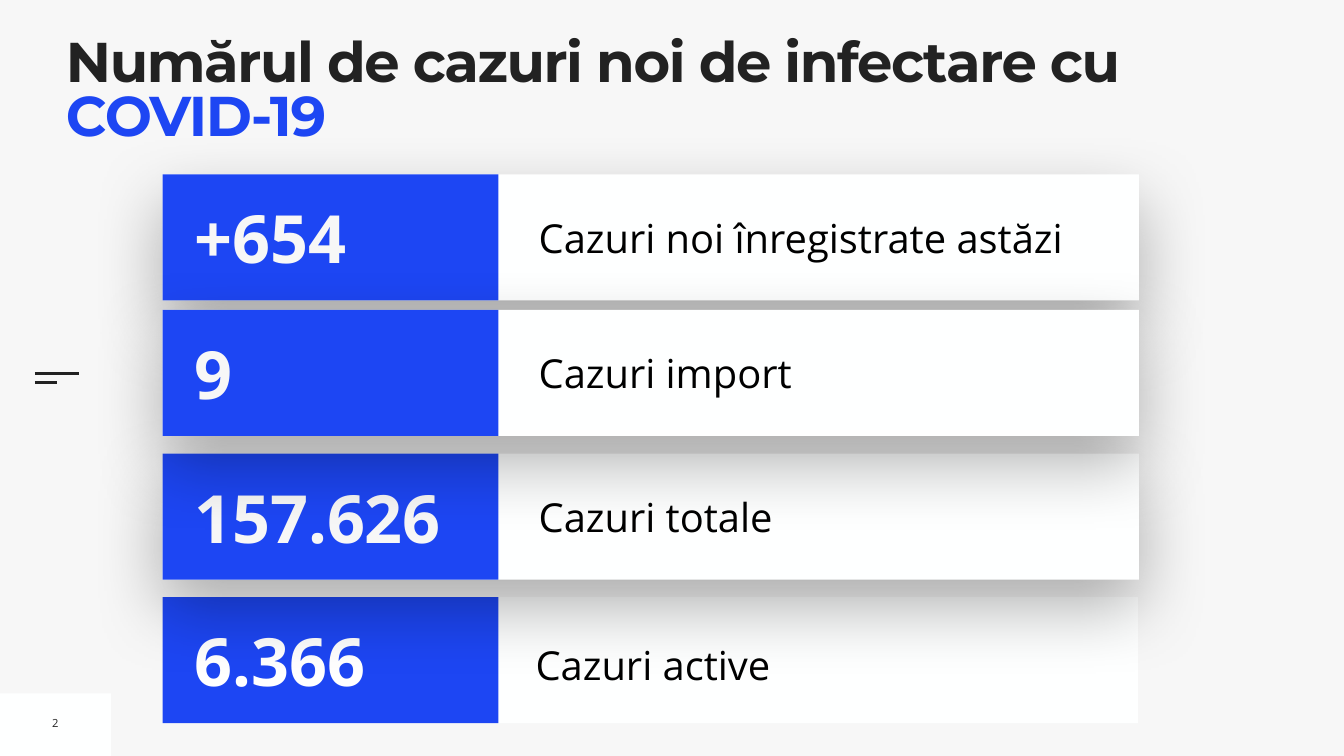
"""Build a slide of daily COVID-19 case counts as four labelled cards."""
from dataclasses import dataclass

from lxml import etree
from pptx import Presentation
from pptx.dml.color import RGBColor as RGB
from pptx.enum import shapes, text
from pptx.oxml.ns import qn
from pptx.util import Inches, Pt


@dataclass(frozen=True)
class Theme:
    back: RGB = RGB.from_string("F7F7F7")
    card: RGB = RGB.from_string("FEFFFF")
    white: RGB = RGB.from_string("FFFFFF")
    blue: RGB = RGB.from_string("1D46F3")
    dark: RGB = RGB.from_string("222222")
    black: RGB = RGB.from_string("000000")
    head: str = "Montserrat"
    body: str = "Open Sans"
    title: int = 80
    count: int = 95
    label: int = 57
    page: int = 16


theme = Theme()
deck = Presentation()
deck.slide_width, deck.slide_height = Inches(26.67), Inches(15)
slide = deck.slides.add_slide(deck.slide_layouts[6])
slide.background.fill.solid()
slide.background.fill.fore_color.rgb = theme.back


def add_box(left, top, width, height, color):
    box = slide.shapes.add_shape(
        shapes.MSO_SHAPE.RECTANGLE, *map(Inches, (left, top, width, height)))
    box.shadow.inherit = False
    box.fill.solid()
    box.fill.fore_color.rgb = color
    box.line.fill.background()
    return box


def add_text(left, top, width, height, words, size, color, bold=False,
             face=theme.body, inset=0.1, anchor=text.MSO_ANCHOR.MIDDLE):
    frame = slide.shapes.add_textbox(
        *map(Inches, (left, top, width, height))).text_frame
    frame.word_wrap = True
    frame.vertical_anchor = anchor
    frame.margin_left = frame.margin_right = Inches(inset)
    frame.margin_top = frame.margin_bottom = Inches(inset)
    para = frame.paragraphs[0]
    para.add_run().text = words
    para.font.name, para.font.size, para.font.bold = face, Pt(size), bold
    para.font.color.rgb = color
    return para


add_box(0, 13.76, 2.2, 1.24, theme.card)
for top, right in ((7.41, 1.57), (7.59, 1.13)):
    dash = slide.shapes.add_connector(
        shapes.MSO_CONNECTOR.STRAIGHT, Inches(0.69), Inches(top), Inches(right), Inches(top))
    dash.line.color.rgb = theme.dark
    dash.line.width = Pt(3)
    etree.SubElement(dash._element.spPr, qn("a:effectLst"))

page = add_text(0.8, 14.09, 0.6, 0.51, "2", theme.page, theme.dark)
page.alignment = text.PP_ALIGN.CENTER

title = add_text(1.31, 0.78, 23.94, 1.58, "Numărul de cazuri noi de infectare cu ",
                 theme.title, theme.dark, True, theme.head, 0, text.MSO_ANCHOR.TOP)
title.line_spacing = 0.8
title.add_run().text = "COVID-19"
title.runs[1].font.color.rgb = theme.blue
for run in title.runs:
    run.font._element.set("spc", "-200")

rows = (
    (11.85, "6.366", "Cazuri active", theme.white, 10.53, 0.76, False),
    (9, "157.626", "Cazuri totale", theme.back, 10.59, 0.67, True),
    (3.46, "+654", "Cazuri noi înregistrate astăzi", theme.back, 10.59, 0.67, True),
    (6.15, "9", "Cazuri import", theme.back, 10.59, 0.67, True),
)
for top, count, label, color, left, drop, raised in rows:
    card = add_box(3.23, top, 19.37 if raised else 19.35, 2.5, theme.card)
    if raised:
        glow = etree.SubElement(
            card._element.spPr.find(qn("a:effectLst")), qn("a:outerShdw"),
            blurRad=str(Pt(100)), dist=str(Pt(40)), dir="5400000", rotWithShape="0")
        shade = etree.SubElement(glow, qn("a:srgbClr"), val=str(theme.black))
        etree.SubElement(shade, qn("a:alpha"), val="30000")
    add_text(left, top + drop, 11.76, 1.16, label, theme.label, theme.black)
    add_box(3.23, top, 6.66, 2.5, theme.blue)
    add_text(3.76, top + 0.35, 6.03, 1.8, count, theme.count, color, True)

deck.save("out.pptx")
